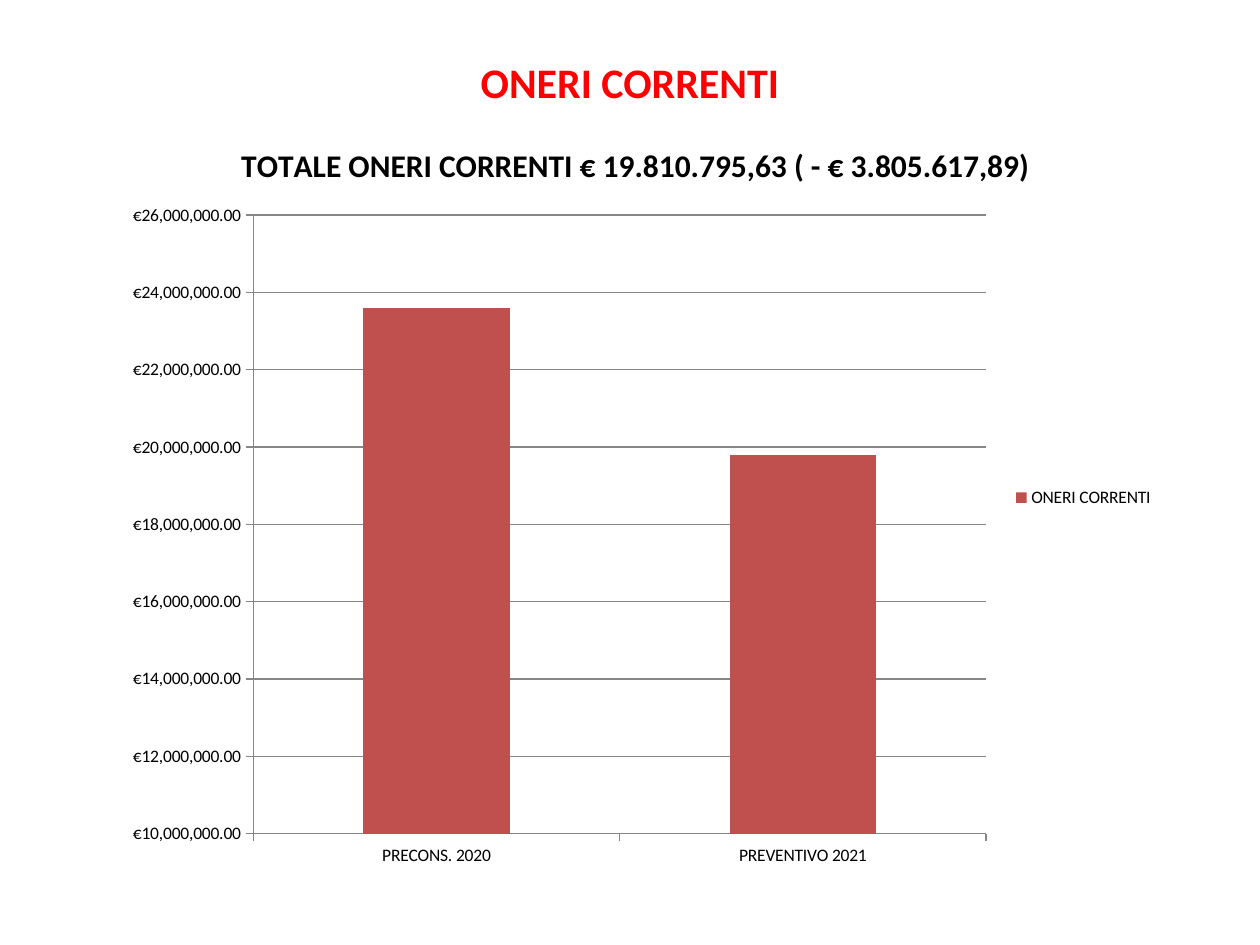
from lxml import etree
from pptx import Presentation
from pptx import util as u
from pptx.chart.data import CategoryChartData
from pptx.dml.color import RGBColor
from pptx.enum import chart as ch, text
from pptx.oxml.ns import qn

RED = RGBColor(0xFF, 0x00, 0x00)
BRICK = RGBColor(0xC0, 0x50, 0x4D)
GREY = RGBColor(0x86, 0x86, 0x86)
BLACK = RGBColor(0x00, 0x00, 0x00)
FONT = "Calibri"


def style_font(font, size, color, bold=False):
    font.name = FONT
    font.size = u.Pt(size)
    font.bold = bold
    font.color.rgb = color


def add_title(s, x, y, w, h):
    sp = s.shapes.title
    sp.left, sp.top, sp.width, sp.height = map(u.Inches, (x, y, w, h))
    tf = sp.text_frame
    tf.text = "ONERI CORRENTI"
    tf.vertical_anchor = text.MSO_ANCHOR.MIDDLE
    p = tf.paragraphs[0]
    p.alignment = text.PP_ALIGN.CENTER
    style_font(p.runs[0].font, 24, RED, True)


def set_plot_box(chart, x, y, w, h):
    area = chart._chartSpace.chart.plotArea
    for old in area.findall(qn("c:layout")):
        area.remove(old)
    layout = etree.Element(qn("c:layout"))
    manual = etree.SubElement(layout, qn("c:manualLayout"))
    settings = [("layoutTarget", "inner"), ("xMode", "edge"), ("yMode", "edge"),
                ("x", x), ("y", y), ("w", w), ("h", h)]
    for name, value in settings:
        etree.SubElement(manual, qn(f"c:{name}")).set("val", str(value))
    area.insert(0, layout)


def add_cost_chart(s, x, y, w, h):
    data = CategoryChartData()
    data.categories = ["PRECONS. 2020", "PREVENTIVO 2021"]
    data.add_series("ONERI CORRENTI", (23600000, 19800000))
    chart = s.shapes.add_chart(ch.XL_CHART_TYPE.COLUMN_CLUSTERED,
                               *map(u.Inches, (x, y, w, h)), data).chart
    style_font(chart.font, 10, BLACK)

    chart.has_title = True
    tf = chart.chart_title.text_frame
    tf.text = "TOTALE ONERI CORRENTI € 19.810.795,63 ( - € 3.805.617,89)"
    style_font(tf.paragraphs[0].runs[0].font, 18, BLACK, True)
    chart.chart_title.include_in_layout = False

    chart.has_legend = True
    chart.legend.position = ch.XL_LEGEND_POSITION.RIGHT
    chart.legend.include_in_layout = False

    plot = chart.plots[0]
    plot.gap_width = 150
    plot.vary_by_categories = False
    fill = plot.series[0].format.fill
    fill.solid()
    fill.fore_color.rgb = BRICK

    val = chart.value_axis
    val.minimum_scale, val.maximum_scale = 10000000, 26000000
    val.major_unit = 2000000
    val.has_major_gridlines = True
    val.tick_labels.number_format = '"€"#,##0.00'
    val.tick_labels.number_format_is_linked = False
    for axis in (chart.category_axis, val):
        axis.major_tick_mark = ch.XL_TICK_MARK.OUTSIDE
    for part in (chart.category_axis, val, val.major_gridlines):
        part.format.line.color.rgb = GREY
        part.format.line.width = u.Pt(0.75)
    set_plot_box(chart, 0.14, 0.13, 0.69, 0.81)


def main():
    prs = Presentation()
    prs.slide_width, prs.slide_height = u.Inches(10), u.Inches(7.5)
    s = prs.slides.add_slide(prs.slide_layouts[5])
    add_title(s, 0.5, 0.3, 9, 0.69)
    add_cost_chart(s, 0.83, 0.92, 8.43, 6.06)
    prs.save("out.pptx")


if __name__ == "__main__":
    main()
